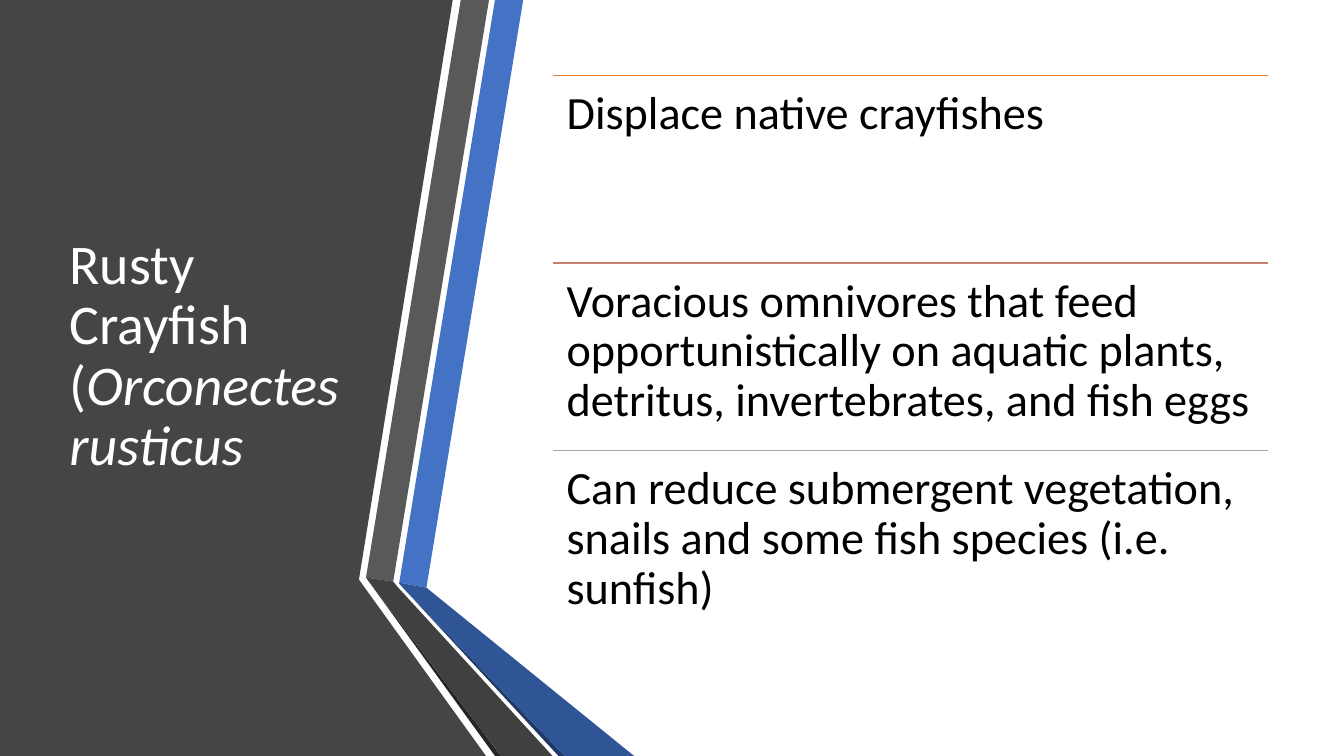
from pptx import Presentation
from pptx.dml.color import RGBColor
from pptx.enum.shapes import MSO_CONNECTOR
from pptx.enum.text import MSO_ANCHOR
from pptx.oxml.ns import qn
from pptx.util import Inches, Pt
from lxml import etree

WHITE = RGBColor(0xFF, 0xFF, 0xFF)
BLACK = RGBColor(0x00, 0x00, 0x00)
PANEL_GRAY = RGBColor(0x45, 0x45, 0x45)
STRIPE_BLUE = RGBColor(0x44, 0x72, 0xC4)
STRIPE_GRAY = RGBColor(0x59, 0x59, 0x59)
EDGE_GRAY = RGBColor(0x26, 0x26, 0x26)
EDGE_BLUE = RGBColor(0x20, 0x38, 0x64)
FOLD_BLUE = RGBColor(0x2F, 0x55, 0x97)
FOLD_GRAY = RGBColor(0x40, 0x40, 0x40)
ORANGE = RGBColor(0xED, 0x7D, 0x31)
ROSE = RGBColor(0xC4, 0x81, 0x70)
SILVER = RGBColor(0xA5, 0xA5, 0xA5)

prs = Presentation()
prs.slide_width = Inches(13.33)
prs.slide_height = Inches(7.5)
slide = prs.slides.add_slide(prs.slide_layouts[6])


def add_text(runs, left, top, width, height, size, color,
             anchor=MSO_ANCHOR.TOP, inset_x=0.1, inset_y=0.05):
    """Add a one-paragraph text box; runs are (text, italic) pairs."""
    box = slide.shapes.add_textbox(Inches(left), Inches(top), Inches(width), Inches(height))
    frame = box.text_frame
    frame.word_wrap = True
    frame.vertical_anchor = anchor
    frame.margin_left = frame.margin_right = Inches(inset_x)
    frame.margin_top = frame.margin_bottom = Inches(inset_y)
    paragraph = frame.paragraphs[0]
    paragraph.line_spacing = 0.9
    for text, italic in runs:
        run = paragraph.add_run()
        run.text = text
        run.font.name = "Calibri"
        run.font.size = Pt(size)
        run.font.italic = italic
        run.font.color.rgb = color


# Dark panel and the folded ribbons along its edge, back to front
facets = [
    (PANEL_GRAY, [(0, 0), (4.49, 0), (3.56, 5.75), (4.82, 7.5), (0, 7.5)]),
    (STRIPE_BLUE, [(3.96, 5.78), (4.23, 5.83), (5.19, 0), (4.91, 0)]),
    (STRIPE_GRAY, [(4.85, 0), (4.57, 0), (3.63, 5.73), (3.9, 5.77)]),
    (EDGE_GRAY, [(3.63, 5.73), (4.91, 7.5), (4.97, 7.5)]),
    (EDGE_BLUE, [(3.96, 5.79), (5.54, 7.5), (5.6, 7.5)]),
    (FOLD_BLUE, [(3.96, 5.79), (5.6, 7.5), (6.29, 7.5), (4.23, 5.83), (3.96, 5.78)]),
    (FOLD_GRAY, [(5.48, 7.5), (3.95, 5.83), (3.9, 5.77), (3.63, 5.73), (4.97, 7.5)]),
]
for color, corners in facets:
    points = [(Inches(x), Inches(y)) for x, y in corners]
    builder = slide.shapes.build_freeform(*points[0])
    builder.add_line_segments(points[1:], close=True)
    facet = builder.convert_to_shape()
    facet.shadow.inherit = False
    facet.fill.solid()
    facet.fill.fore_color.rgb = color
    facet.line.fill.background()

add_text([("Rusty Crayfish (", False), ("Orconectes rusticus", True)],
         0.59, 0.75, 3.04, 5.58, size=40, color=WHITE, anchor=MSO_ANCHOR.MIDDLE)

# Impacts, each under its own rule
IMPACT_LEFT, IMPACT_TOP, IMPACT_WIDTH, IMPACT_HEIGHT = 5.48, 0.75, 7.1, 1.86
impacts = [
    (ORANGE, "Displace native crayfishes"),
    (ROSE, "Voracious omnivores that feed opportunistically on aquatic plants, "
           "detritus, invertebrates, and fish eggs"),
    (SILVER, "Can reduce submergent vegetation, snails and some fish species (i.e. sunfish)"),
]
for row, (color, impact) in enumerate(impacts):
    top = IMPACT_TOP + row * IMPACT_HEIGHT
    rule = slide.shapes.add_connector(
        MSO_CONNECTOR.STRAIGHT, Inches(IMPACT_LEFT), Inches(top),
        Inches(IMPACT_LEFT + IMPACT_WIDTH), Inches(top))
    rule.line.color.rgb = color
    rule.line.width = Pt(1)
    etree.SubElement(rule._element.spPr, qn("a:effectLst"))
    add_text([(impact, False)], IMPACT_LEFT, top, IMPACT_WIDTH, IMPACT_HEIGHT,
             size=33, color=BLACK, inset_x=0.14, inset_y=0.14)

prs.save("out.pptx")
